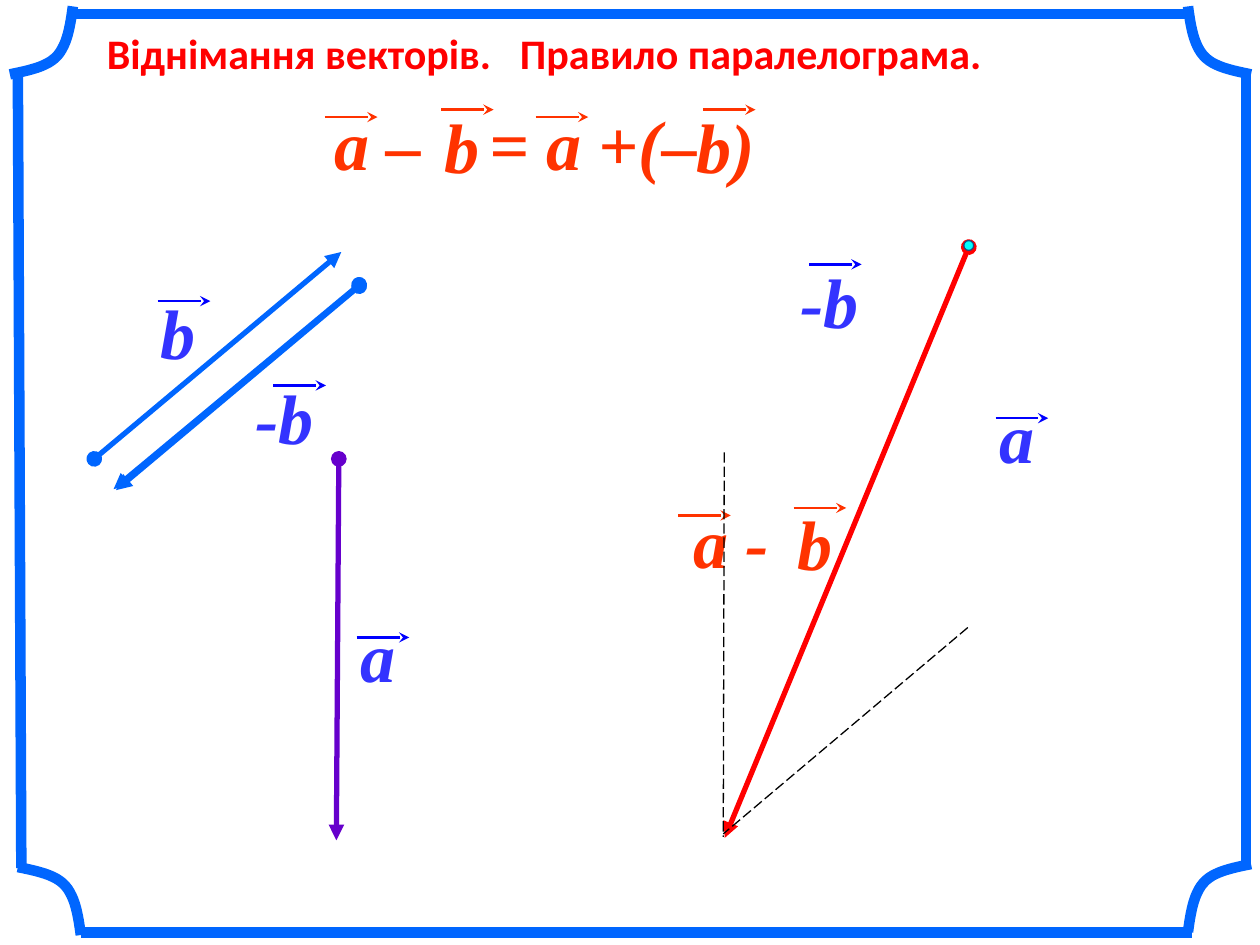
"""Build a slide on subtracting vectors by the parallelogram rule."""
from pptx import Presentation
from pptx.dml.color import RGBColor
from pptx.enum.dml import MSO_LINE
from pptx.enum.shapes import MSO_CONNECTOR, MSO_SHAPE
from pptx.enum.text import MSO_ANCHOR, MSO_AUTO_SIZE, PP_ALIGN
from pptx.oxml.ns import qn
from pptx.util import Cm, Pt
from lxml.etree import SubElement

BLUE, RED, VIOLET, ORANGE = "0066FF", "FF0000", "6600CC", "FF3300"
INK, MARK = "3333FF", "0000FF"
CORNER = [(0, 0), (0.38, 0.08), (0.76, 0.15), (0.96, 0.38),
          (1.16, 0.61), (1.22, 0.99), (1.27, 1.37)]


def color(value):
    return RGBColor.from_string(value)


def bezier(points, steps=12):
    for i in range(1, steps + 1):
        t = i / steps
        weights = ((1 - t) ** 3, 3 * t * (1 - t) ** 2, 3 * t * t * (1 - t), t ** 3)
        yield tuple(sum(w * p[k] for w, p in zip(weights, points)) for k in (0, 1))


class Board:
    def __init__(self, slide):
        self.s = slide
        self.math_font, self.title_font = "Times New Roman", "Calibri"

    def run(self, p, text, font, size, fill, italic=False):
        r = p.add_run()
        r.text = text
        r.font.name, r.font.size = font, Pt(size)
        r.font.bold, r.font.italic = True, italic
        r.font.color.rgb = color(fill)
        return r

    def title(self, first, second):
        sp = self.s.shapes.title
        sp.left, sp.top, sp.width, sp.height = Cm(1.9), Cm(0.43), Cm(22.43), Cm(1.3)
        tf = sp.text_frame
        tf.auto_size, tf.vertical_anchor = MSO_AUTO_SIZE.NONE, MSO_ANCHOR.TOP
        p = tf.paragraphs[0]
        p.alignment = PP_ALIGN.LEFT
        gap = [self.run(p, text, self.title_font, 24, RED)
               for text in (first, " ", second)][1]
        gap.font._element.set("spc", "1085")

    def line(self, x1, y1, x2, y2, stroke, width, head=None, tail=None, dash=None):
        c = self.s.shapes.add_connector(
            MSO_CONNECTOR.STRAIGHT, Cm(x1), Cm(y1), Cm(x2), Cm(y2))
        c.line.color.rgb, c.line.width = color(stroke), Pt(width)
        if dash:
            c.line.dash_style = dash
        spPr = c._element.spPr
        ln = spPr.find(qn("a:ln"))
        for tag, kind in (("a:headEnd", head), ("a:tailEnd", tail)):
            if kind:
                SubElement(ln, qn(tag), type=kind)
        SubElement(spPr, qn("a:effectLst"))

    def vector(self, x1, y1, x2, y2, stroke):
        self.line(x1, y1, x2, y2, stroke, 3, "oval", "triangle")

    def corner(self, x, y, dx, dy):
        pts = [(x + dx * u, y + dy * v) for u, v in CORNER]
        fb = self.s.shapes.build_freeform(Cm(pts[0][0]), Cm(pts[0][1]))
        curve = [*bezier(pts[:4]), *bezier(pts[3:])]
        fb.add_line_segments([(Cm(u), Cm(v)) for u, v in curve], close=False)
        sp = fb.convert_to_shape()
        sp.fill.background()
        sp.line.color.rgb, sp.line.width = color(BLUE), Pt(6)
        sp.shadow.inherit = False

    def label(self, text, x, y, ax, ay, fill=INK, mark=MARK, width=1.7):
        tf = self.s.shapes.add_textbox(Cm(x), Cm(y), Cm(width), Cm(1.96)).text_frame
        tf.word_wrap = False
        p = tf.paragraphs[0]
        p.alignment = PP_ALIGN.CENTER
        self.run(p, text, self.math_font, 40, fill, italic=True)
        self.line(ax, ay, ax + 1.06, ay, mark, 1.5, tail="stealth")

    def dot(self, x, y, size):
        sp = self.s.shapes.add_shape(MSO_SHAPE.OVAL, Cm(x), Cm(y), Cm(size), Cm(size))
        sp.fill.solid()
        sp.fill.fore_color.rgb = color("00FFFF")
        sp.line.color.rgb, sp.line.width = color("1F497D"), Pt(0.75)
        sp.shadow.inherit = False


def main():
    prs = Presentation()
    prs.slide_width, prs.slide_height = Cm(25.4), Cm(19.05)
    board = Board(prs.slides.add_slide(prs.slide_layouts[5]))
    board.title("Віднімання векторів.", "Правило паралелограма.")

    for ends in ((7.24, 5.77, 2.34, 9.88, BLUE), (19.53, 4.98, 14.61, 16.89, RED),
                 (7.24, 5.74, 2.29, 9.86, BLUE), (6.83, 9.25, 6.78, 16.94, VIOLET),
                 (1.9, 9.25, 6.88, 5.08, BLUE)):
        board.vector(*ends)

    for side in ((1.5, 0.28, 24, 0.28), (1.63, 18.8, 24.03, 18.8),
                 (25.12, 1.5, 25.12, 17.5), (0.36, 1.5, 0.43, 17.5)):
        board.line(*side, BLUE, 6)
    for corner in ((0.36, 17.48, 1, 1), (25.22, 17.42, -1, 1),
                   (25.22, 1.5, -1, -1), (0.2, 1.5, 1, -1)):
        board.corner(*corner)

    for label in (("a", 6.78, 12.22, 7.19, 12.85), ("a", 19.66, 7.8, 20.07, 8.43),
                  ("-b", 15.88, 5.08, 16.31, 5.33), ("b", 2.74, 5.72, 3.18, 6.07),
                  ("-b", 4.88, 7.42, 5.51, 7.77)):
        board.label(*label)
    for *label, width in (("b", 15.57, 9.96, 16, 10.24, 1.7),
                          ("a -", 12.83, 9.93, 13.67, 10.39, 3.81),
                          ("b", 8.46, 1.96, 8.89, 2.21, 1.7),
                          ("a –", 5.72, 1.9, 6.55, 2.36, 3.81),
                          ("= a +(–", 9.32, 1.9, 10.8, 2.36, 5.28),
                          ("b)", 13.77, 1.96, 14.17, 2.21, 1.7)):
        board.label(*label, ORANGE, ORANGE, width)

    board.dot(19.43, 4.85, 0.2)
    for side in ((14.6, 9.12, 14.58, 16.87), (19.51, 12.65, 14.58, 16.81)):
        board.line(*side, "000000", 0.75, dash=MSO_LINE.LONG_DASH)
    prs.save("out.pptx")


if __name__ == "__main__":
    main()
